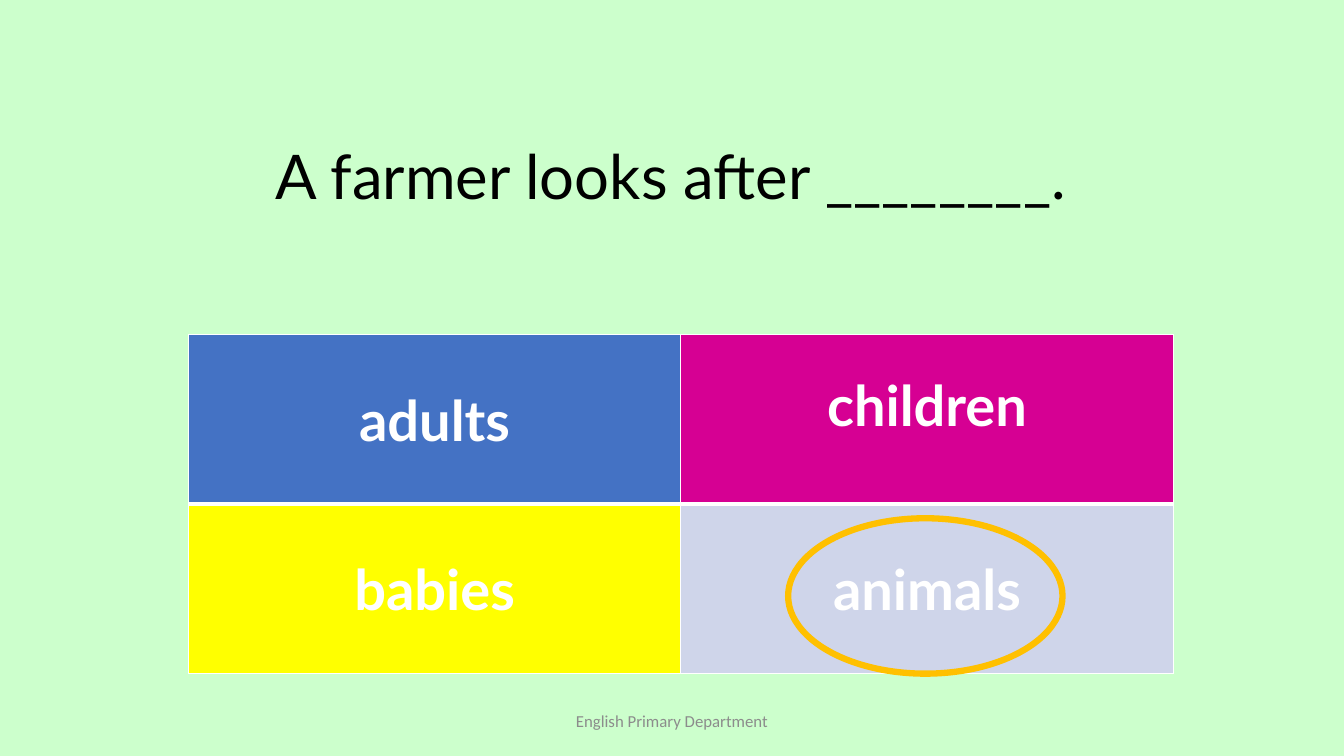
from pptx import Presentation
from pptx.dml.color import RGBColor
from pptx.enum.shapes import MSO_SHAPE
from pptx.enum.text import MSO_ANCHOR, MSO_AUTO_SIZE, PP_ALIGN
from pptx.oxml import parse_xml
from pptx.oxml.ns import nsdecls
from pptx.util import Pt

WORDS = [
    [("adults", "4472C4"), ("children", "D60093")],
    [("babies", "FFFF00"), ("animals", "CFD5EA")],
]


def color(code):
    """Turn a hex string into a colour."""
    return RGBColor.from_string(code)


def write(frame, text, size, font, code, bold=False):
    """Put one centred, middle-anchored line into a text frame."""
    frame.text = text
    frame.word_wrap = True
    frame.vertical_anchor = MSO_ANCHOR.MIDDLE
    line = frame.paragraphs[0]
    line.alignment = PP_ALIGN.CENTER
    face = line.runs[0].font
    face.size, face.name, face.bold = Pt(size), font, bold
    face.color.rgb = color(code)


def place(shape, box):
    """Move a shape to a box given in points."""
    shape.left, shape.top, shape.width, shape.height = map(Pt, box)


def border(cell, sides):
    """Draw white lines of the given widths around a cell."""
    props = cell._tc.get_or_add_tcPr()
    for spot, (side, width) in enumerate(sides.items()):
        props.insert(spot, parse_xml(
            f'<a:{side} {nsdecls("a")} w="{Pt(width)}"><a:solidFill>'
            f'<a:srgbClr val="FFFFFF"/></a:solidFill></a:{side}>'))


def question(slide, box):
    """Fill the title with the sentence to complete."""
    title = slide.shapes.title
    place(title, box)
    write(title.text_frame, "A farmer looks after ________. ", 44, "Lato", "000000")
    title.text_frame.auto_size = MSO_AUTO_SIZE.NONE


def choices(slide, box):
    """Add the grid of words and ring the right one."""
    left, top, width, height = box
    rows, cols = len(WORDS), len(WORDS[0])
    table = slide.shapes.add_table(rows, cols, *map(Pt, box)).table
    for r, row in enumerate(WORDS):
        table.rows[r].height = Pt(height / rows)
        for c, (word, fill) in enumerate(row):
            table.columns[c].width = Pt(width / cols)
            cell = table.cell(r, c)
            write(cell.text_frame, word, 40, "Lato", "FFFFFF", True)
            cell.vertical_anchor = MSO_ANCHOR.MIDDLE
            cell.fill.solid()
            cell.fill.fore_color.rgb = color(fill)
            border(cell, {"lnL": 1, "lnR": 1, "lnT": 1 if r == 0 else 3,
                          "lnB": 3 if r == 0 else 1})
    table.cell(0, 1).margin_bottom = Pt(25.2)

    ring = slide.shapes.add_shape(
        MSO_SHAPE.OVAL, Pt(left + 428.4), Pt(top + 131), Pt(196), Pt(111))
    ring.shadow.inherit = False
    ring.fill.background()
    ring.line.color.rgb = color("FFC000")
    ring.line.width = Pt(4.5)


def footer(slide, box):
    """Add the department name below the grid."""
    note = slide.shapes.add_textbox(*map(Pt, box))
    write(note.text_frame, "English Primary Department", 12, "Calibri", "8C8C8C")


def main():
    """Build and save the quiz slide."""
    deck = Presentation()
    deck.slide_width, deck.slide_height = Pt(960), Pt(540)
    slide = deck.slides.add_slide(deck.slide_layouts[5])
    slide.background.fill.solid()
    slide.background.fill.fore_color.rgb = color("CCFFCC")
    question(slide, (-8.6, 95, 987, 60.5))
    choices(slide, (134.6, 239.2, 703.4, 242))
    footer(slide, (318, 500.5, 324, 28.8))
    deck.save("out.pptx")


if __name__ == "__main__":
    main()
